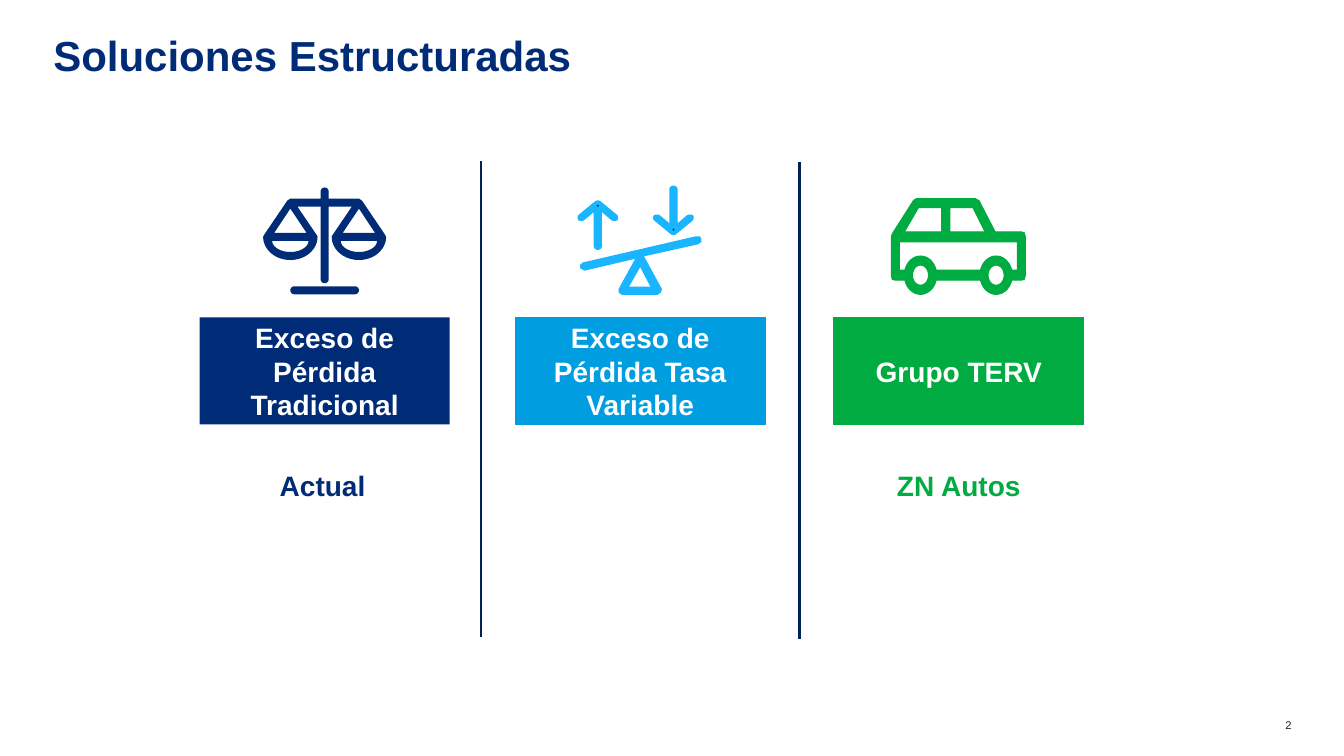
from math import cos, radians, sin

from lxml.etree import SubElement
from pptx import Presentation
from pptx.dml.color import RGBColor
from pptx.enum.shapes import MSO_CONNECTOR, MSO_SHAPE
from pptx.enum.text import MSO_ANCHOR, PP_ALIGN
from pptx.oxml.ns import qn
from pptx.util import Inches, Pt

NAVY, DARK_NAVY = "002C77", "002159"
BLUE, SKY = "009DE0", "19B5FF"
GREEN, GRAY, WHITE = "00AC41", "202020", "FFFFFF"


def rgb(color):
    return RGBColor.from_string(color)


def style_shape(sp, fill, line=None, width=0.75):
    sp.shadow.inherit = False
    sp.fill.solid()
    sp.fill.fore_color.rgb = rgb(fill)
    if line:
        sp.line.color.rgb = rgb(line)
        sp.line.width = Pt(width)
    else:
        sp.line.fill.background()


def write(tf, text, size, color, align, bold=True):
    tf.word_wrap = True
    p = tf.paragraphs[0]
    p.text = text
    p.alignment = align
    p.font.name = "Arial"
    p.font.size = Pt(size)
    p.font.bold = bold
    p.font.color.rgb = rgb(color)
    return p


def add_text(slide, box, text, size, color, align=PP_ALIGN.CENTER, bold=True):
    tf = slide.shapes.add_textbox(*map(Inches, box)).text_frame
    tf.margin_left = tf.margin_right = tf.margin_top = tf.margin_bottom = 0
    return write(tf, text, size, color, align, bold)


def add_card(slide, x, text, fill, line=None):
    sp = slide.shapes.add_shape(MSO_SHAPE.RECTANGLE, Inches(x), Inches(3.15),
                                Inches(2.48), Inches(1.06))
    style_shape(sp, fill, line)
    sp.text_frame.vertical_anchor = MSO_ANCHOR.MIDDLE
    write(sp.text_frame, text, 20, WHITE, PP_ALIGN.CENTER)


def add_divider(slide, x, top, bottom):
    line = slide.shapes.add_connector(MSO_CONNECTOR.STRAIGHT, Inches(x), Inches(top),
                                      Inches(x), Inches(bottom))
    line.line.color.rgb = rgb(DARK_NAVY)
    line.line.width = Pt(1.5)
    SubElement(line._element.spPr, qn("a:effectLst"))


def arc(cx, cy, rx, ry, start, end, steps=24):
    """Points on an ellipse; angles in degrees, clockwise from the right."""
    angles = [radians(start + (end - start) * i / steps) for i in range(steps + 1)]
    return [(cx + rx * cos(a), cy + ry * sin(a)) for a in angles]


def mirror(points, axis):
    return [(2 * axis - x, y) for x, y in reversed(points)]


def add_outline(slide, contours, fill, line=None, width=0.75):
    """Draw closed contours as one shape; inner contours become holes."""
    scaled = [[(Inches(x), Inches(y)) for x, y in points] for points in contours]
    builder = slide.shapes.build_freeform(*scaled[0][0], scale=1.0)
    for i, points in enumerate(scaled):
        if i:
            builder.move_to(*points[0])
        builder.add_line_segments(points[1:], close=True)
    style_shape(builder.convert_to_shape(), fill, line, width)


def add_scales(slide):
    axis = 3.22
    half = (arc(axis, 1.9, 0.04, 0.04, -90, -180, 6)
            + [(3.18, 1.97), (2.88, 1.97), (2.85, 1.99), (2.62, 2.33)]
            + arc(2.88, 2.35, 0.27, 0.23, 180, 0)
            + [(3.14, 2.33), (2.95, 2.05), (3.18, 2.05)]
            + arc(axis, 2.77, 0.04, 0.04, 180, 90, 6))
    bowl = arc(2.88, 2.39, 0.18, 0.11, 0, 180)
    cords = [(3.04, 2.31), (2.72, 2.31), (2.88, 2.07)]
    add_outline(slide, [half + mirror(half, axis), bowl, cords,
                        mirror(bowl, axis), mirror(cords, axis)], NAVY)
    base = arc(2.92, 2.88, 0.04, 0.04, 90, 270, 12)
    add_outline(slide, [base + mirror(base, axis)], NAVY)


def add_seesaw(slide):
    beam = [(6.95, 2.37), (6.94, 2.35), (6.9, 2.35), (5.78, 2.61), (5.76, 2.63),
            (5.76, 2.66), (5.8, 2.68), (6.31, 2.56), (6.14, 2.87), (6.14, 2.9),
            (6.17, 2.92), (6.52, 2.92), (6.55, 2.9), (6.56, 2.87), (6.38, 2.54),
            (6.92, 2.42), (6.95, 2.4)]
    add_outline(slide, [beam, [(6.46, 2.85), (6.23, 2.85), (6.35, 2.64)]], SKY, SKY)
    axis = 5.93
    half = [(axis, 2.01), (5.92, 2.01), (5.75, 2.15), (5.75, 2.17), (5.78, 2.17),
            (5.91, 2.06), (5.91, 2.45), (axis, 2.46)]
    up = half + mirror(half, axis)[1:-1]
    down = [(12.61 - x, 4.32 - y) for x, y in up]
    for arrow in (up, down):
        add_outline(slide, [arrow], NAVY, SKY, 3)


def add_car(slide):
    rear, front, hub = 9.13, 9.88, 2.73
    body = ([(10.13, 2.3), (9.87, 2.3), (9.71, 1.99), (9.67, 1.97), (9.09, 1.97),
             (9.06, 1.99), (8.85, 2.32), (8.84, 2.35), (8.84, 2.73), (8.85, 2.77),
             (8.88, 2.78)]
            + arc(rear, hub, 0.16, 0.19, 165, 15)
            + arc(front, hub, 0.16, 0.19, 165, 15)
            + [(10.13, 2.78), (10.16, 2.77), (10.17, 2.73), (10.17, 2.35),
               (10.16, 2.31)])
    panel = ([(10.09, 2.68)]
             + arc(front, hub, 0.16, 0.19, -15, -165)
             + arc(rear, hub, 0.16, 0.19, -15, -165)
             + [(8.92, 2.68), (8.92, 2.4), (10.09, 2.4)])
    front_window = [(9.77, 2.3), (9.42, 2.3), (9.42, 2.06), (9.65, 2.06)]
    rear_window = [(9.11, 2.06), (9.34, 2.06), (9.34, 2.3), (8.97, 2.3)]
    hubs = [arc(x, hub, 0.08, 0.1, 0, 360) for x in (rear, front)]
    add_outline(slide, [body, panel, front_window, rear_window, *hubs], GREEN, GREEN)


def main():
    prs = Presentation()
    prs.slide_width, prs.slide_height = Inches(13.33), Inches(7.5)
    slide = prs.slides.add_slide(prs.slide_layouts[6])

    title = add_text(slide, (0.53, 0.39, 12.27, 0.54), "Soluciones Estructuradas",
                     30, NAVY, PP_ALIGN.LEFT)
    title.line_spacing = 0.8
    add_text(slide, (12.5, 7.13, 0.31, 0.13), "2", 8, GRAY, PP_ALIGN.RIGHT, bold=False)

    add_divider(slide, 4.77, 1.6, 6.32)
    add_divider(slide, 7.93, 1.61, 6.34)

    add_text(slide, (2.1, 4.65, 2.2, 0.34), "Actual", 20, NAVY)
    add_text(slide, (8.41, 4.65, 2.2, 0.34), "ZN Autos", 20, GREEN)

    add_card(slide, 1.98, "Exceso de Pérdida Tradicional", NAVY)
    add_card(slide, 5.11, "Exceso de Pérdida Tasa Variable", BLUE, BLUE)
    add_card(slide, 8.27, "Grupo TERV", GREEN, GREEN)

    add_car(slide)
    add_scales(slide)
    add_seesaw(slide)
    prs.save("out.pptx")


if __name__ == "__main__":
    main()
